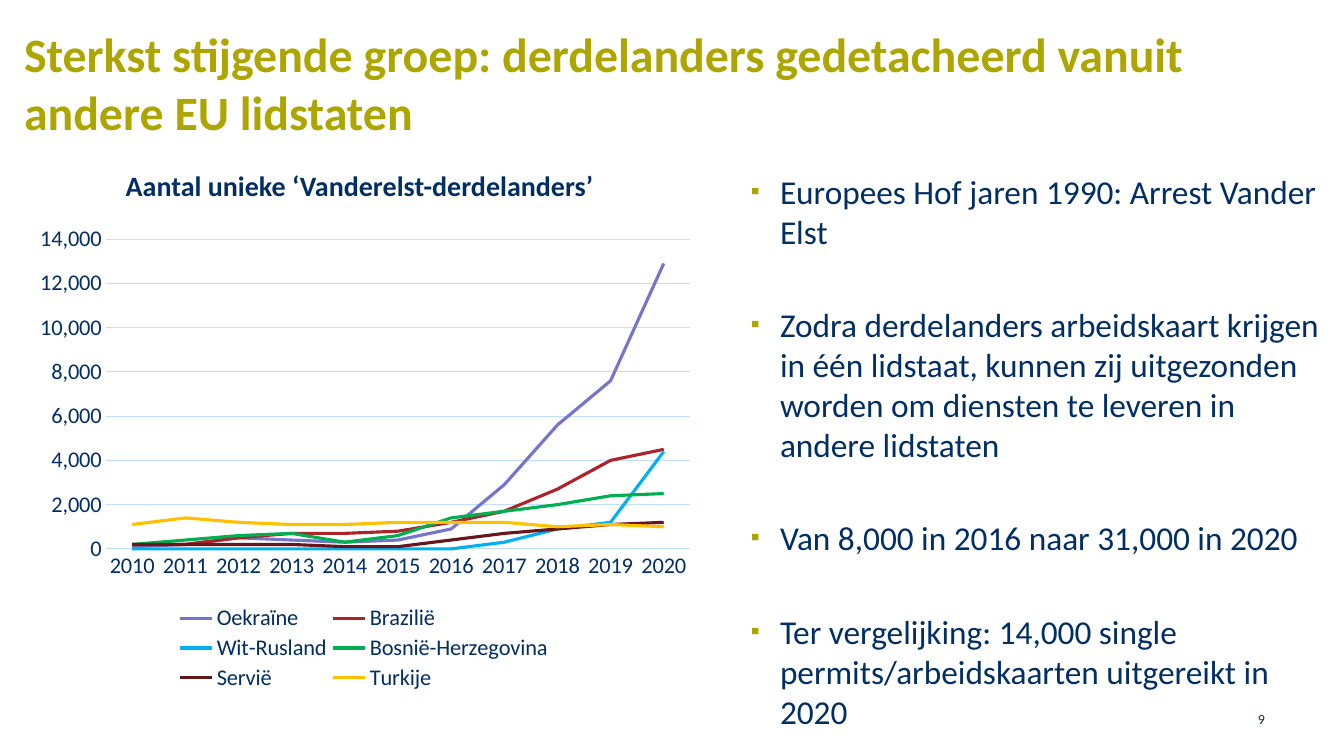
from lxml import etree
from pptx import Presentation
from pptx.chart.data import CategoryChartData
from pptx.dml.color import RGBColor
from pptx.enum.chart import XL_CHART_TYPE as ChartType
from pptx.enum.chart import XL_LEGEND_POSITION as LegendPosition
from pptx.enum.chart import XL_TICK_MARK as TickMark
from pptx.enum.text import MSO_ANCHOR as Anchor
from pptx.enum.text import MSO_AUTO_SIZE as AutoSize
from pptx.enum.text import PP_ALIGN as Align
from pptx.oxml.ns import qn
from pptx.util import Pt

EMU_PER_PX = 914400 / 100.8
FONT = "Calibri"
NAVY = RGBColor(0x00, 0x2E, 0x65)
OLIVE = RGBColor(0xAD, 0xA5, 0x00)
PALE_BLUE = RGBColor(0xC2, 0xDE, 0xFF)
VIOLET = RGBColor(0x75, 0x75, 0xCB)
RED = RGBColor(0xAC, 0x24, 0x2A)
SKY = RGBColor(0x00, 0xB0, 0xF0)
GREEN = RGBColor(0x00, 0xB0, 0x50)
MAROON = RGBColor(0x67, 0x16, 0x19)
AMBER = RGBColor(0xFF, 0xC0, 0x00)

TITLE = "Sterkst stijgende groep: derdelanders gedetacheerd vanuit andere EU lidstaten"
POINTS = [
    "Europees Hof jaren 1990: Arrest Vander Elst",
    "Zodra derdelanders arbeidskaart krijgen in één lidstaat, kunnen zij "
    "uitgezonden worden om diensten te leveren in andere lidstaten",
    "Van 8,000 in 2016 naar 31,000 in 2020",
    "Ter vergelijking: 14,000 single permits/arbeidskaarten uitgereikt in 2020",
]
YEARS = [str(year) for year in range(2010, 2021)]
COUNTRIES = [
    ("Oekraïne", VIOLET, [100, 200, 500, 400, 300, 400, 900, 2900, 5600, 7600, 12900]),
    ("Brazilië", RED, [200, 200, 500, 700, 700, 800, 1200, 1700, 2700, 4000, 4500]),
    ("Wit-Rusland", SKY, [0, 0, 0, 0, 0, 0, 0, 300, 900, 1200, 4400]),
    ("Bosnië-Herzegovina", GREEN,
     [200, 400, 600, 700, 300, 600, 1400, 1700, 2000, 2400, 2500]),
    ("Servië", MAROON, [200, 200, 200, 200, 100, 100, 400, 700, 900, 1100, 1200]),
    ("Turkije", AMBER,
     [1100, 1400, 1200, 1100, 1100, 1200, 1200, 1200, 1000, 1100, 1000]),
]


def px(length):
    return round(length * EMU_PER_PX)


def place(box, left, top, width, height):
    box.left, box.top, box.width, box.height = map(px, (left, top, width, height))


def style_font(font, size, color=NAVY, bold=False):
    font.name, font.size, font.bold = FONT, Pt(size), bold
    font.color.rgb = color


def prepare_frame(frame, inset=0, anchor=Anchor.TOP):
    frame.word_wrap = True
    frame.auto_size = AutoSize.NONE
    frame.vertical_anchor = anchor
    frame.margin_left = frame.margin_right = px(inset)
    frame.margin_top = frame.margin_bottom = 0


def set_text(box, text, size, align, color=NAVY, bold=False, **framing):
    frame = box.text_frame
    frame.text = text
    prepare_frame(frame, **framing)
    para = frame.paragraphs[0]
    para.alignment = align
    style_font(para.runs[0].font, size, color, bold)


def add_label(page, area, text, size, align, **options):
    box = page.shapes.add_textbox(*map(px, area))
    set_text(box, text, size, align, **options)


def add_bullet(para):
    props = para._p.get_or_add_pPr()
    props.set("marL", str(px(29)))
    props.set("indent", str(-px(29)))
    color = etree.SubElement(props, qn("a:buClr"))
    etree.SubElement(color, qn("a:srgbClr"), val=str(OLIVE))
    etree.SubElement(props, qn("a:buSzPct"), val="75000")
    etree.SubElement(props, qn("a:buFont"), typeface=FONT)
    etree.SubElement(props, qn("a:buChar"), char="▪")


def fill_list(box, points):
    frame = box.text_frame
    prepare_frame(frame)
    for index, point in enumerate(points):
        para = frame.paragraphs[0] if index == 0 else frame.add_paragraph()
        para.text = point
        add_bullet(para)
        para.space_before = Pt(38 if index else 0)
        para.alignment = Align.LEFT
        style_font(para.runs[0].font, 23.8)


def set_layout(parent, position, after=None, inner=False):
    """Fix a chart part at x, y, w, h given as shares of the chart."""
    for old in parent.findall(qn("c:layout")):
        parent.remove(old)
    layout = etree.Element(qn("c:layout"))
    manual = etree.SubElement(layout, qn("c:manualLayout"))
    if inner:
        etree.SubElement(manual, qn("c:layoutTarget"), val="inner")
    for mode in ("xMode", "yMode"):
        etree.SubElement(manual, qn(f"c:{mode}"), val="edge")
    for name, share in zip("xywh", position):
        etree.SubElement(manual, qn(f"c:{name}"), val=str(share))
    parent.insert(0 if after is None else parent.index(after) + 1, layout)


def style_axis(axis):
    axis.major_tick_mark = axis.minor_tick_mark = TickMark.NONE
    style_font(axis.tick_labels.font, 16)


def style_line(line, color, width):
    line.color.rgb = color
    line.width = Pt(width)


def add_line_chart(page, area):
    data = CategoryChartData(number_format="#,##0")
    data.categories = YEARS
    for name, _, values in COUNTRIES:
        data.add_series(name, values)
    chart = page.shapes.add_chart(ChartType.LINE, *map(px, area), data).chart
    style_font(chart.font, 16)
    chart.has_title = False

    # Series
    plot = chart.plots[0]
    plot.vary_by_categories = False
    for series, (_, color, _) in zip(plot.series, COUNTRIES):
        series.smooth = False
        style_line(series.format.line, color, 2.25)

    # Axes
    years, counts = chart.category_axis, chart.value_axis
    style_axis(years)
    style_line(years.format.line, PALE_BLUE, 0.75)
    style_axis(counts)
    counts.minimum_scale, counts.maximum_scale, counts.major_unit = 0, 14000, 2000
    counts.tick_labels.number_format = "#,##0"
    counts.tick_labels.number_format_is_linked = False
    counts.format.line.fill.background()
    style_line(counts.major_gridlines.format.line, PALE_BLUE, 0.75)

    # Legend and plot positions
    chart.has_legend = True
    legend = chart.legend
    legend.position = LegendPosition.BOTTOM
    legend.include_in_layout = False
    style_font(legend.font, 16)
    legend_xml = legend._element
    set_layout(legend_xml, (0.22, 0.8, 0.56, 0.19), legend_xml.find(qn("c:legendPos")))
    plot_area = chart._chartSpace.chart.plotArea
    set_layout(plot_area, (0.12, 0.05, 0.86, 0.64), inner=True)


def main():
    deck = Presentation()
    deck.slide_width, deck.slide_height = px(1344), px(756)
    page = deck.slides.add_slide(deck.slide_layouts[1])

    # Title
    title = page.shapes.title
    place(title, 24, 25, 1274, 79)
    set_text(title, TITLE, 34.2, Align.LEFT, color=OLIVE, bold=True)

    # Bullet list
    body = page.placeholders[1]
    place(body, 751, 171, 577, 520)
    fill_list(body, POINTS)

    # Chart with heading
    add_label(page, (71, 169, 577, 45), "Aantal unieke ‘Vanderelst-derdelanders’",
              20, Align.CENTER, bold=True)
    add_line_chart(page, (24, 215, 680, 484))

    # Page number
    add_label(page, (984, 699, 291, 40), "9", 10, Align.RIGHT,
              inset=10, anchor=Anchor.MIDDLE)
    deck.save("out.pptx")


if __name__ == "__main__":
    main()
